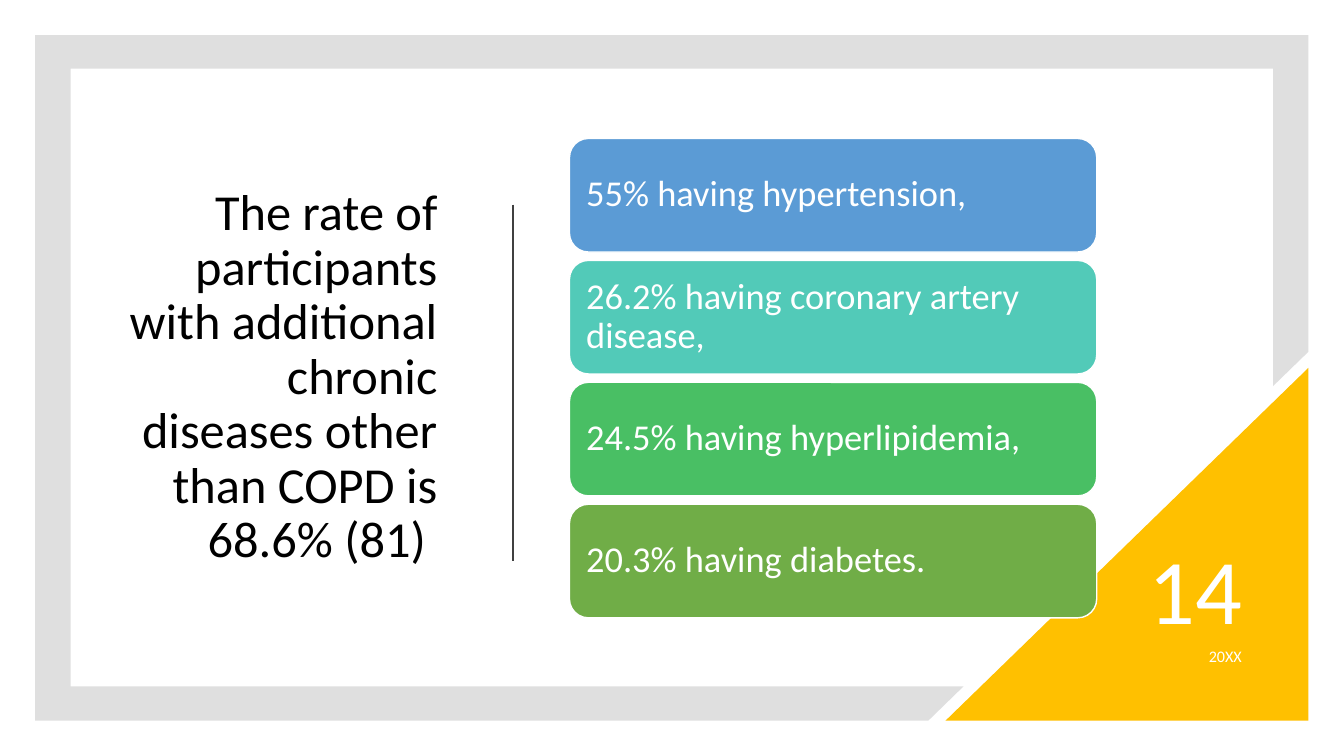
"""Build the slide on chronic diseases that accompany COPD."""
import dataclasses

import lxml.etree
import pptx
import pptx.dml.color
import pptx.enum.shapes
import pptx.enum.text
import pptx.oxml.ns
import pptx.shapes.autoshape
import pptx.slide
import pptx.text.text
import pptx.util

Pt = pptx.util.Pt
ALIGN = pptx.enum.text.PP_ALIGN
SHAPE = pptx.enum.shapes.MSO_SHAPE

COLOURS = {
    "text": "000000",
    "white": "FFFFFF",
    "frame": "808080",
    "corner": "FFC000",
    "divider": "404040",
    "hypertension": "5B9BD5",
    "coronary": "52CAB8",
    "hyperlipidemia": "49BF64",
    "diabetes": "70AD47",
}
FONT = "Calibri"
CARD_LEFT, CARD_TOP, CARD_WIDTH, CARD_HEIGHT = 406.8, 98.9, 376.6, 81.1
CARD_STEP = 87.1
FRAME_OUTLINE = [
    (25.2, 25.2), (934.6, 25.2), (934.6, 251.3), (909.4, 275.8),
    (909.4, 49), (50.4, 49), (50.4, 490.3), (688.3, 490.3),
    (663.1, 514.8), (25.2, 514.8),
]


@dataclasses.dataclass(frozen=True)
class Disease:
    """A card with the share of participants having one disease."""
    text: str
    colour: str


@dataclasses.dataclass(frozen=True)
class CornerLabel:
    """A right-aligned label on the corner triangle."""
    text: str
    left: float
    top: float
    width: float
    height: float
    size: float
    line_spacing: float


DISEASES = [
    Disease("55% having hypertension,", "hypertension"),
    Disease("26.2% having coronary artery disease,", "coronary"),
    Disease("24.5% having hyperlipidemia,", "hyperlipidemia"),
    Disease("20.3% having diabetes.", "diabetes"),
]
CORNER_LABELS = [
    CornerLabel("20XX", 716.4, 454.3, 177.8, 28.8, 11.5, 1),
    CornerLabel("14", 762.5, 385.2, 131.8, 79.2, 66, 0.9),
]


def rgb(name: str) -> pptx.dml.color.RGBColor:
    """Return the named colour."""
    return pptx.dml.color.RGBColor.from_string(COLOURS[name])


def write(frame: pptx.text.text.TextFrame, text: str, size: float, colour: str,
          align: ALIGN, line_spacing: float = 0.9) -> None:
    """Write one vertically centred paragraph."""
    frame.text = text
    frame.word_wrap = True
    frame.auto_size = pptx.enum.text.MSO_AUTO_SIZE.NONE
    frame.vertical_anchor = pptx.enum.text.MSO_ANCHOR.MIDDLE
    paragraph = frame.paragraphs[0]
    paragraph.alignment = align
    paragraph.line_spacing = line_spacing
    font = paragraph.runs[0].font
    font.name, font.size = FONT, Pt(size)
    font.color.rgb = rgb(colour)


def paint(shape: pptx.shapes.autoshape.Shape, colour: str) -> None:
    """Give a shape a flat fill without outline or shadow."""
    shape.shadow.inherit = False
    shape.fill.solid()
    shape.fill.fore_color.rgb = rgb(colour)
    shape.line.fill.background()


def add_frame(slide: pptx.slide.Slide) -> None:
    """Draw the translucent border cut off at the corner."""
    start, *rest = [(Pt(x), Pt(y)) for x, y in FRAME_OUTLINE]
    builder = slide.shapes.build_freeform(*start)
    builder.add_line_segments(rest, close=True)
    border = builder.convert_to_shape()
    paint(border, "frame")
    qn = pptx.oxml.ns.qn
    fill_colour = border.fill._xPr.find(qn("a:solidFill")).find(qn("a:srgbClr"))
    lxml.etree.SubElement(fill_colour, qn("a:alpha")).set("val", "25000")


def add_corner(slide: pptx.slide.Slide) -> None:
    """Draw the triangle in the lower right corner."""
    corner = slide.shapes.add_shape(
        SHAPE.RIGHT_TRIANGLE, Pt(675.4), Pt(262.8), Pt(259.2), Pt(252))
    paint(corner, "corner")
    corner._element.spPr.xfrm.set("flipH", "1")


def add_title(slide: pptx.slide.Slide) -> None:
    """Place the title in its placeholder."""
    title = slide.shapes.title
    title.left, title.top, title.width, title.height = (
        Pt(79.2), Pt(93.6), Pt(240.5), Pt(352.8))
    write(title.text_frame,
          "The rate of participants with additional chronic diseases other "
          "than COPD is 68.6% (81) ", 36, "text", ALIGN.RIGHT)


def add_divider(slide: pptx.slide.Slide) -> None:
    """Draw the vertical line between title and cards."""
    divider = slide.shapes.add_connector(
        pptx.enum.shapes.MSO_CONNECTOR.STRAIGHT,
        Pt(366.5), Pt(146.2), Pt(366.5), Pt(401))
    divider.line.color.rgb = rgb("divider")
    divider.line.width = Pt(1.5)
    lxml.etree.SubElement(divider._element.spPr, pptx.oxml.ns.qn("a:effectLst"))


def add_corner_label(slide: pptx.slide.Slide, label: CornerLabel) -> None:
    """Write one label on the corner triangle."""
    box = slide.shapes.add_textbox(
        Pt(label.left), Pt(label.top), Pt(label.width), Pt(label.height))
    write(box.text_frame, label.text, label.size, "white", ALIGN.RIGHT,
          label.line_spacing)


def add_card(slide: pptx.slide.Slide, row: int, disease: Disease) -> None:
    """Draw one disease card in the given row."""
    card = slide.shapes.add_shape(
        SHAPE.ROUNDED_RECTANGLE, Pt(CARD_LEFT), Pt(CARD_TOP + row * CARD_STEP),
        Pt(CARD_WIDTH), Pt(CARD_HEIGHT))
    paint(card, disease.colour)
    card.line.color.rgb = rgb("white")
    card.line.width = Pt(1)
    frame = card.text_frame
    frame.margin_left = frame.margin_right = Pt(8)
    frame.margin_top = frame.margin_bottom = Pt(8)
    write(frame, disease.text, 26, "white", ALIGN.LEFT)


def main() -> None:
    """Build and save the presentation."""
    deck = pptx.Presentation()
    deck.slide_width, deck.slide_height = Pt(960), Pt(540)
    slide = deck.slides.add_slide(deck.slide_layouts.get_by_name("Title Only"))
    add_frame(slide)
    add_corner(slide)
    add_title(slide)
    add_divider(slide)
    for label in CORNER_LABELS:
        add_corner_label(slide, label)
    for row, disease in enumerate(DISEASES):
        add_card(slide, row, disease)
    deck.save("out.pptx")


if __name__ == "__main__":
    main()
